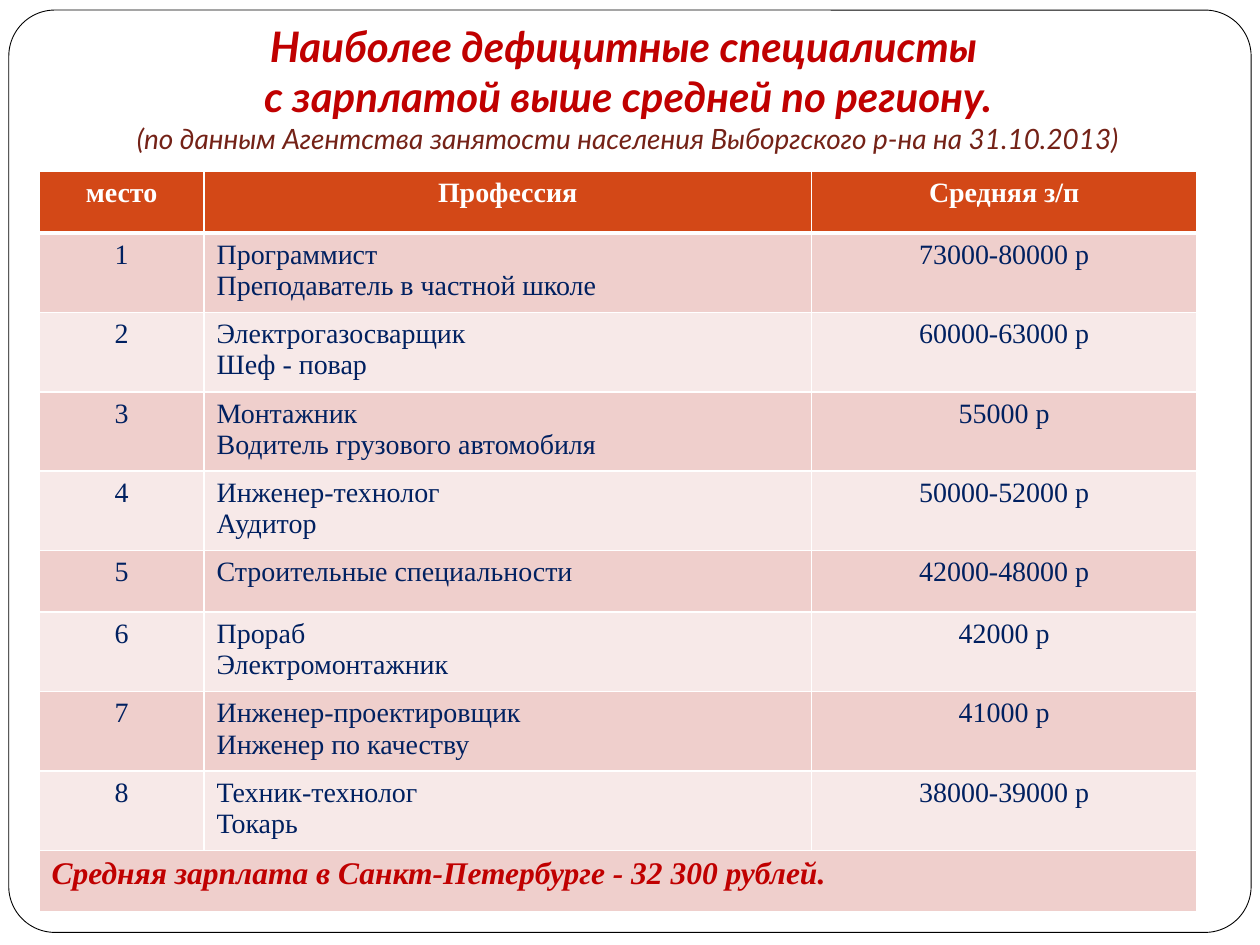
from lxml.etree import SubElement
from pptx import Presentation
from pptx.dml.color import RGBColor
from pptx.enum.shapes import MSO_SHAPE as Shape
from pptx.enum.text import MSO_ANCHOR as Anchor, MSO_AUTO_SIZE as AutoSize, PP_ALIGN as Align
from pptx.oxml.ns import qn
from pptx.util import Inches, Pt

COLORS = {
    "paper": "FFFFFF", "outline": "000000", "accent": "C00000", "source": "742217",
    "header": "D34817", "odd": "EFCFCC", "even": "F7E9E8", "body": "002060",
}
TITLE_FONT, TABLE_FONT = "Lato", "Times New Roman"
COLUMN_WIDTHS = (1.31, 4.82, 3.06)
SINGLE_ROW, DOUBLE_ROW = 0.49, 0.63

HEADINGS = ("место", "Профессия", "Средняя з/п")
JOBS = [
    ("Программист\nПреподаватель в частной школе", "73000-80000 р"),
    ("Электрогазосварщик\nШеф - повар", "60000-63000 р"),
    ("Монтажник\nВодитель грузового автомобиля", "55000 р"),
    ("Инженер-технолог\nАудитор", "50000-52000 р"),
    ("Строительные специальности", "42000-48000 р"),
    ("Прораб\nЭлектромонтажник", "42000 р"),
    ("Инженер-проектировщик\nИнженер по качеству", "41000 р"),
    ("Техник-технолог\nТокарь", "38000-39000 р"),
]
AVERAGE = "Средняя зарплата в Санкт-Петербурге - 32 300 рублей."


def color(name):
    return RGBColor.from_string(COLORS[name])


def write(paragraph, text, font=TABLE_FONT, size=16, ink="body",
          bold=False, italic=False, align=Align.LEFT):
    paragraph.alignment = align
    run = paragraph.add_run()
    run.text = text
    run.font.name, run.font.size = font, Pt(size)
    run.font.bold, run.font.italic = bold, italic
    run.font.color.rgb = color(ink)


def add_frame(slide, left, top, width, height):
    frame = slide.shapes.add_shape(
        Shape.ROUNDED_RECTANGLE, Inches(left), Inches(top), Inches(width), Inches(height))
    frame.adjustments[0] = 0.05
    frame.shadow.inherit = False
    frame.fill.solid()
    frame.fill.fore_color.rgb = color("paper")
    frame.line.color.rgb = color("outline")
    frame.line.width = Pt(0.5)
    # Send the frame behind the title
    slide.shapes._spTree.insert(2, frame._element)


def add_title(slide, left, top, width, height):
    title = slide.shapes.title
    title.left, title.top = Inches(left), Inches(top)
    title.width, title.height = Inches(width), Inches(height)
    box = title.text_frame
    box.word_wrap, box.auto_size = True, AutoSize.NONE
    box.vertical_anchor = Anchor.BOTTOM
    box.margin_left = box.margin_right = box.margin_bottom = Inches(0.1)
    box.margin_top = Inches(0.05)
    heading = box.paragraphs[0]
    for line in ("Наиболее дефицитные специалисты ", "с зарплатой выше средней по региону."):
        write(heading, line, font=TITLE_FONT, size=24, ink="accent",
              bold=True, italic=True, align=Align.CENTER)
        heading.add_line_break()
    write(heading, "(по данным Агентства занятости населения Выборгского р-на на 31.10.2013)",
          font=TITLE_FONT, ink="source", italic=True, align=Align.CENTER)


def style_cell(cell, fill, bottom=1):
    # Borders come before the fill in the cell properties
    properties = cell._tc.get_or_add_tcPr()
    for side, width in (("lnL", 1), ("lnR", 1), ("lnT", 1), ("lnB", bottom)):
        border = SubElement(properties, qn(f"a:{side}"), w=str(Pt(width)))
        SubElement(SubElement(border, qn("a:solidFill")), qn("a:srgbClr"), val=COLORS["paper"])
    cell.fill.solid()
    cell.fill.fore_color.rgb = color(fill)


def fill_cell(cell, text, **text_format):
    box = cell.text_frame
    for index, line in enumerate(text.split("\n")):
        paragraph = box.add_paragraph() if index else box.paragraphs[0]
        write(paragraph, line, **text_format)


def add_salary_table(slide, left, top):
    rows = [HEADINGS]
    rows += [(str(place), job, pay) for place, (job, pay) in enumerate(JOBS, 1)]
    rows.append((AVERAGE,))
    heights = [DOUBLE_ROW if any("\n" in text for text in row) else SINGLE_ROW for row in rows]
    table = slide.shapes.add_table(
        len(rows), len(COLUMN_WIDTHS), Inches(left), Inches(top),
        Inches(sum(COLUMN_WIDTHS)), Inches(sum(heights))).table
    for column, width in zip(table.columns, COLUMN_WIDTHS):
        column.width = Inches(width)

    last = len(rows) - 1
    for r, (texts, height) in enumerate(zip(rows, heights)):
        table.rows[r].height = Inches(height)
        fill = "header" if r == 0 else "odd" if r % 2 else "even"
        for cell in table.rows[r].cells:
            style_cell(cell, fill, bottom=3 if r == 0 else 1)
        for c, text in enumerate(texts):
            if r == last:
                look = {"size": 18, "ink": "accent", "bold": True, "italic": True}
            elif r == 0:
                look = {"ink": "paper", "bold": True, "align": Align.CENTER}
            else:
                look = {"align": Align.LEFT if c == 1 else Align.CENTER}
            fill_cell(table.cell(r, c), text, **look)
    # The average salary spans the whole last row
    table.cell(last, 0).merge(table.cell(last, len(COLUMN_WIDTHS) - 1))


def main():
    deck = Presentation()
    deck.slide_width, deck.slide_height = Inches(10), Inches(7.5)
    slide = deck.slides.add_slide(deck.slide_layouts[5])
    add_frame(slide, 0.07, 0.08, 9.86, 7.32)
    add_title(slide, 0.47, 0.16, 9.03, 1.17)
    add_salary_table(slide, 0.31, 1.36)
    deck.save("out.pptx")


if __name__ == "__main__":
    main()
